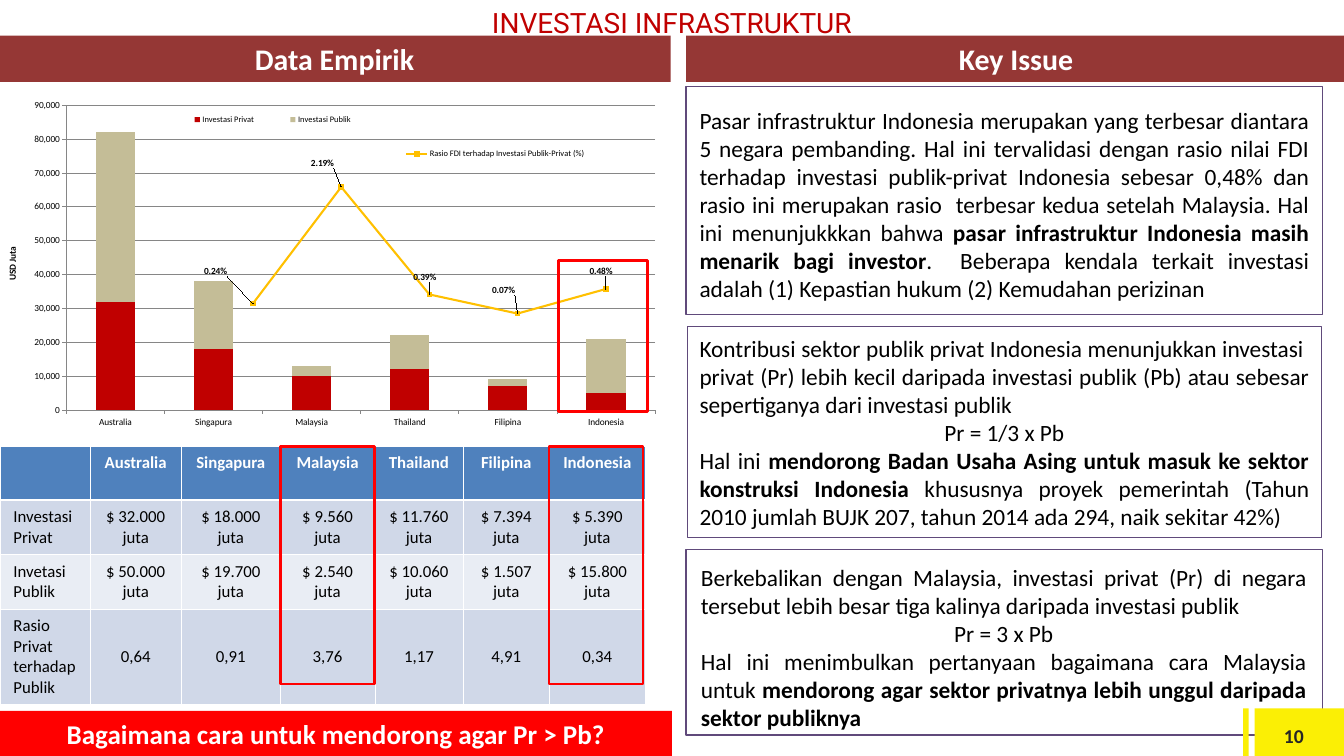
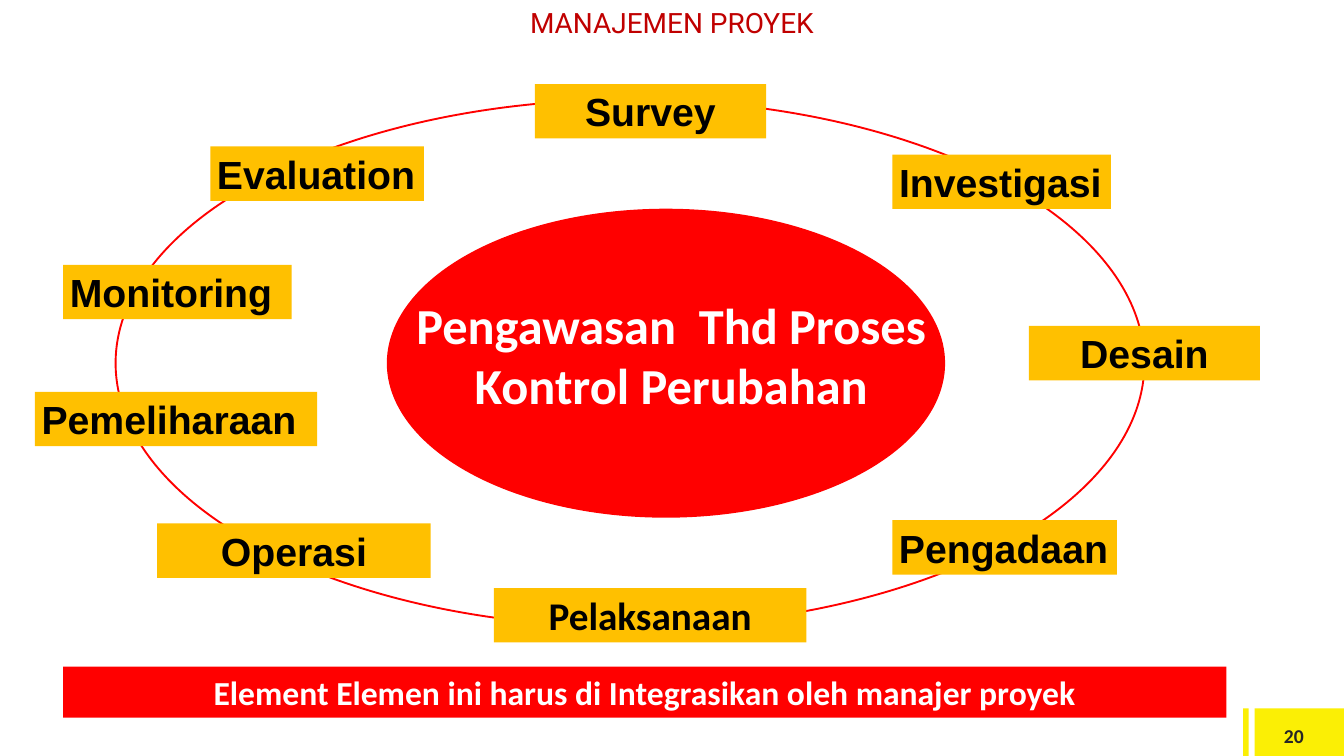
"""Build two slides on infrastructure investment and project management."""
from lxml import etree
from pptx import Presentation
from pptx.chart.data import CategoryChartData
from pptx.dml.color import RGBColor
from pptx.enum import chart as ch, shapes, text
from pptx.oxml import parse_xml
from pptx.oxml.ns import nsdecls, qn
from pptx.util import Inches, Pt

COLORS = {
    "maroon": "953735", "crimson": "C00000", "red": "FF0000", "amber": "FFC000",
    "yellow": "FBEF05", "purple": "604A7B", "sand": "C4BD97", "blue": "4F81BD",
    "pale": "D0D8E8", "paler": "E9EDF4", "white": "FFFFFF", "black": "000000",
    "ink": "262626", "grid": "868686",
}
RGB = {name: RGBColor.from_string(value) for name, value in COLORS.items()}
LEFT, CENTER, RIGHT, JUSTIFY = (
    text.PP_ALIGN.LEFT, text.PP_ALIGN.CENTER, text.PP_ALIGN.RIGHT, text.PP_ALIGN.JUSTIFY)
TOP, MIDDLE = text.MSO_ANCHOR.TOP, text.MSO_ANCHOR.MIDDLE
RECT, OVAL = shapes.MSO_SHAPE.RECTANGLE, shapes.MSO_SHAPE.OVAL


def write(frame, paragraphs, size, color="black", font="Calibri", inset=(0.2, 0.1), anchor=MIDDLE):
    """Fill a frame with (alignment, [(words, bold), ...]) paragraphs."""
    frame.word_wrap = True
    frame.auto_size = text.MSO_AUTO_SIZE.NONE
    frame.vertical_anchor = anchor
    frame.margin_left = frame.margin_right = Inches(inset[0])
    frame.margin_top = frame.margin_bottom = Inches(inset[1])
    for number, (align, runs) in enumerate(paragraphs):
        paragraph = frame.add_paragraph() if number else frame.paragraphs[0]
        paragraph.alignment = align
        for words, bold in runs:
            run = paragraph.add_run()
            run.text = words
            run.font.name, run.font.size, run.font.bold = font, Pt(size), bold
            run.font.color.rgb = RGB[color]


def block(slide, at, fill=None, line=None, width=1.5, preset=RECT):
    """Add a flat shape and return its text frame."""
    shape = slide.shapes.add_shape(preset, *map(Inches, at))
    shape.shadow.inherit = False
    if fill:
        shape.fill.solid()
        shape.fill.fore_color.rgb = RGB[fill]
    else:
        shape.fill.background()
    if line:
        shape.line.color.rgb = RGB[line]
        shape.line.width = Pt(width)
    else:
        shape.line.fill.background()
    return shape.text_frame


deck = Presentation()
deck.slide_width, deck.slide_height = Inches(20), Inches(11.25)
pages = []
for heading, number in [("INVESTASI INFRASTRUKTUR", "10"), ("MANAJEMEN PROYEK", "20")]:
    page = deck.slides.add_slide(deck.slide_layouts[5])
    title = page.shapes.title
    title.left, title.top, title.width, title.height = map(Inches, (0, 0, 20, 0.67))
    write(title.text_frame, [(CENTER, [(heading, False)])], 30, "crimson", "Roboto", (0.18, 0.09))
    pages.append((page, number))
investment, management = [page for page, number in pages]

for heading, left, width in [("Data Empirik", -0.02, 10), ("Key Issue", 10.21, 9.82)]:
    band = block(investment, (left, 0.53, width, 0.69), "maroon")
    write(band, [(CENTER, [(heading, True)])], 32, "white", inset=(0.15, 0.07))

issues = [
    ((10.21, 1.29, 9.47, 3.39), (10.21, 1.48, 9.47, 3.15), [
        (JUSTIFY, [
            ("Pasar infrastruktur Indonesia merupakan yang terbesar diantara 5 negara pembanding. "
             "Hal ini tervalidasi dengan rasio nilai FDI terhadap investasi publik-privat Indonesia "
             "sebesar 0,48% dan rasio ini merupakan rasio  terbesar kedua setelah Malaysia. "
             "Hal ini menunjukkkan bahwa ", False),
            ("pasar infrastruktur Indonesia masih menarik bagi investor", True),
            (".  Beberapa kendala terkait investasi adalah (1) Kepastian hukum "
             "(2) Kemudahan perizinan", False)])]),
    ((10.23, 4.86, 9.44, 3.14), (10.21, 4.88, 9.47, 3.15), [
        (JUSTIFY, [
            ("Kontribusi sektor publik privat Indonesia menunjukkan investasi  privat (Pr) lebih "
             "kecil daripada investasi publik (Pb) atau sebesar sepertiganya dari investasi publik",
             False)]),
        (CENTER, [("Pr = 1/3 x Pb", False)]),
        (JUSTIFY, [
            ("Hal ini ", False),
            ("mendorong Badan Usaha Asing untuk masuk ke sektor konstruksi Indonesia ", True),
            ("khususnya proyek pemerintah (Tahun 2010 jumlah BUJK 207, tahun 2014 ada 294, "
             "naik sekitar 42%)", False)])]),
    ((10.21, 8.18, 9.47, 2.76), (10.23, 8.28, 9.41, 2.73), [
        (JUSTIFY, [
            ("Berkebalikan dengan Malaysia, investasi privat (Pr) di negara tersebut lebih besar "
             "tiga kalinya daripada investasi publik", False)]),
        (CENTER, [("Pr = 3 x Pb", False)]),
        (JUSTIFY, [
            ("Hal ini menimbulkan pertanyaan bagaimana cara Malaysia untuk ", False),
            ("mendorong agar sektor privatnya lebih unggul daripada sektor publiknya", True)])]),
]
for border_at, issue_at, paragraphs in issues:
    block(investment, border_at, line="purple")
    issue = investment.shapes.add_textbox(*map(Inches, issue_at))
    write(issue.text_frame, paragraphs, 25, anchor=TOP)

question = block(investment, (0, 10.58, 10, 0.69), "red")
write(question, [(CENTER, [("Bagaimana cara untuk mendorong agar Pr > Pb?", True)])], 29, "white")

countries = ["Australia", "Singapura", "Malaysia", "Thailand", "Filipina", "Indonesia"]
amounts = CategoryChartData(number_format="#,##0")
amounts.categories = countries
amounts.add_series("Investasi Privat", [32000, 18000, 10000, 12000, 7000, 5000])
amounts.add_series("Investasi Publik", [50000, 20000, 3000, 10000, 2000, 16000])
ratios = CategoryChartData(number_format="0.00%")
ratios.categories = ["1", "2", "3", "4", "5"]
ratios.add_series("Rasio FDI terhadap Investasi Publik-Privat (%)",
                  [0.0024, 0.0219, 0.0039, 0.0007, 0.0048])
bars, trend = [
    investment.shapes.add_chart(kind, *map(Inches, at), data).chart
    for kind, at, data in [
        (ch.XL_CHART_TYPE.COLUMN_STACKED, (-0.12, 1.35, 10.07, 5.4), amounts),
        (ch.XL_CHART_TYPE.LINE_MARKERS_STACKED, (2.9, 1.94, 6.98, 4.36), ratios)]]
for chart in (bars, trend):
    chart.has_title = False
    chart.font.name, chart.font.size = "Calibri", Pt(10)
    chart.font.color.rgb = RGB["black"]
    chart.has_legend = True
    chart.legend.position = ch.XL_LEGEND_POSITION.BOTTOM
    chart.legend.include_in_layout = False
    chart.legend.font.size = Pt(9)
    chart.plots[0].vary_by_categories = False
    chart.element.find(qn("c:chart")).addnext(parse_xml(
        f'<c:spPr {nsdecls("c", "a")}><a:noFill/><a:ln><a:noFill/></a:ln></c:spPr>'))

bars.plots[0].gap_width, bars.plots[0].overlap = 150, 100
for series, color in zip(bars.plots[0].series, ("crimson", "sand")):
    series.format.fill.solid()
    series.format.fill.fore_color.rgb = RGB[color]
amount_axis = bars.value_axis
amount_axis.minimum_scale, amount_axis.maximum_scale, amount_axis.major_unit = 0, 90000, 10000
amount_axis.major_gridlines.format.line.color.rgb = RGB["grid"]
for axis in (amount_axis, bars.category_axis):
    axis.format.line.color.rgb = RGB["grid"]
    axis.major_tick_mark = ch.XL_TICK_MARK.OUTSIDE
unit = amount_axis.axis_title.text_frame.paragraphs[0].add_run()
unit.text = "USD Juta"
unit.font.name, unit.font.size, unit.font.bold = "Calibri", Pt(10), True

trend.value_axis.minimum_scale, trend.value_axis.maximum_scale = 0, 0.025
trend.value_axis.has_major_gridlines = False
trend.value_axis.visible = trend.category_axis.visible = False
ratio = trend.plots[0].series[0]
ratio.smooth = False
ratio.format.line.color.rgb = RGB["amber"]
ratio.format.line.width = Pt(2.25)
ratio.marker.style, ratio.marker.size = ch.XL_MARKER_STYLE.SQUARE, 5
ratio.marker.format.fill.solid()
ratio.marker.format.fill.fore_color.rgb = RGB["amber"]
ratio.marker.format.line.color.rgb = RGB["amber"]
ratio.data_labels.show_value = True
ratio.data_labels.number_format = "0.00%"
ratio.data_labels.number_format_is_linked = False
for index in range(5):
    label = ratio.points[index].data_label
    label.font.name, label.font.size, label.font.bold = "Calibri", Pt(10), True
    label.position = ch.XL_LABEL_POSITION.CENTER

layouts = [
    (bars.element.xpath(".//c:plotArea")[0], 0, (0.11, 0.04, 0.87, 0.84)),
    (bars.element.xpath(".//c:legend")[0], 1, (0.25, 0.05, 0.33, 0.06)),
    (trend.element.xpath(".//c:plotArea")[0], 0, (0.03, 0.13, 0.94, 0.51)),
    (trend.element.xpath(".//c:legend")[0], 1, (0.42, 0.05, 0.44, 0.06)),
]
shifts = [(-0.08, -0.11), (-0.04, -0.08), (-0.01, -0.06), (-0.03, -0.08), (-0.01, -0.06)]
layouts += [(label, 1, shift) for label, shift in zip(trend.element.xpath(".//c:dLbl"), shifts)]
for parent, index, numbers in layouts:
    for old in parent.findall(qn("c:layout")):
        parent.remove(old)
    layout = parse_xml(f'<c:layout {nsdecls("c")}><c:manualLayout/></c:layout>')
    settings = list(zip("xywh", numbers))
    if len(numbers) == 4:
        settings = [("xMode", "edge"), ("yMode", "edge")] + settings
    if index == 0:
        settings = [("layoutTarget", "inner")] + settings
    for tag, value in settings:
        etree.SubElement(layout[0], qn(f"c:{tag}")).set("val", str(value))
    parent.insert(index, layout)

figures = [
    [""] + countries,
    ["Investasi Privat"] + [f"$ {n} juta" for n in
                            ("32.000", "18.000", "9.560", "11.760", "7.394", "5.390")],
    ["Invetasi Publik"] + [f"$ {n} juta" for n in
                           ("50.000", "19.700", "2.540", "10.060", "1.507", "15.800")],
    ["Rasio Privat terhadap Publik", "0,64", "0,91", "3,76", "1,17", "4,91", "0,34"],
]
comparison = investment.shapes.add_table(4, 7, *map(Inches, (0, 6.64, 9.6, 3.8))).table
for column, width in zip(comparison.columns, (1.34, 1.36, 1.47, 1.41, 1.31, 1.29, 1.42)):
    column.width = Inches(width)
for row, height in zip(comparison.rows, (0.8, 0.8, 0.8, 1.4)):
    row.height = Inches(height)
for r, entries in enumerate(figures):
    for c, entry in enumerate(entries):
        cell = comparison.cell(r, c)
        for side in "LRTB":
            thick = (r == 0 and side == "B") or (r == 1 and side == "T")
            cell._tc.get_or_add_tcPr().append(parse_xml(
                f'<a:ln{side} {nsdecls("a")} w="{Pt(3 if thick else 1)}"><a:solidFill>'
                f'<a:srgbClr val="{COLORS["white"]}"/></a:solidFill></a:ln{side}>'))
        cell.fill.solid()
        cell.fill.fore_color.rgb = RGB[("blue", "pale", "paler", "pale")[r]]
        cell.margin_left = cell.margin_right = Inches(0.2)
        cell.margin_top = cell.margin_bottom = Inches(0.1)
        cell.vertical_anchor = MIDDLE if r and c else TOP
        if entry:
            paragraph = cell.text_frame.paragraphs[0]
            paragraph.alignment = CENTER if c else LEFT
            run = paragraph.add_run()
            run.text = entry
            run.font.name, run.font.size, run.font.bold = "Calibri", Pt(18), r == 0
            run.font.color.rgb = RGB["black" if r else "white"]

for highlight in [(8.31, 3.88, 1.32, 2.24), (4.17, 6.65, 1.4, 3.53), (8.17, 6.65, 1.4, 3.53)]:
    block(investment, highlight, line="red", width=3)

block(management, (1.72, 1.48, 15.31, 7.85), line="red", width=2, preset=OVAL)
stages = [
    ("Survey", 7.96, 1.25, 3.44, CENTER, "Arial"),
    ("Investigasi", 13.28, 2.3, 3.25, LEFT, "Arial"),
    ("Evaluation", 3.13, 2.18, 3.18, LEFT, "Arial"),
    ("Monitoring", 0.94, 3.94, 3.4, LEFT, "Arial"),
    ("Desain", 15.31, 4.85, 3.44, CENTER, "Arial"),
    ("Pemeliharaan", 0.52, 5.83, 4.2, LEFT, "Arial"),
    ("Pengadaan", 13.28, 7.74, 3.34, LEFT, "Arial"),
    ("Pelaksanaan", 7.35, 8.75, 4.65, CENTER, "Calibri"),
    ("Operasi", 2.34, 7.79, 4.07, CENTER, "Arial"),
]
for stage, left, top, width, align, font in stages:
    write(block(management, (left, top, width, 0.81), "amber"),
          [(align, [(stage, True)])], 42, font=font, inset=(0.1, 0.05))

block(management, (5.77, 3.12, 8.28, 4.57), "red", "red", 2, OVAL)
control = management.shapes.add_textbox(*map(Inches, (5.77, 4.29, 8.44, 1.97)))
write(control.text_frame, [(CENTER, [("Pengawasan  Thd Proses Kontrol Perubahan", True)])],
      54, "white", inset=(0.1, 0.05))
integration = block(management, (0.94, 9.92, 17.31, 0.76), "red")
write(integration,
      [(CENTER, [("Element Elemen ini harus di Integrasikan oleh manajer proyek", True)])],
      36, "white", inset=(0.15, 0.07))

for page, number in pages:
    for left, width in [(18.67, 1.33), (18.5, 0.08)]:
        block(page, (left, 10.54, width, 0.71), "yellow")
    folio = page.shapes.add_textbox(*map(Inches, (18.79, 10.64, 0.79, 0.61)))
    write(folio.text_frame, [(RIGHT, [(number, True)])], 21, "ink", inset=(0.18, 0.09))

deck.save("out.pptx")
